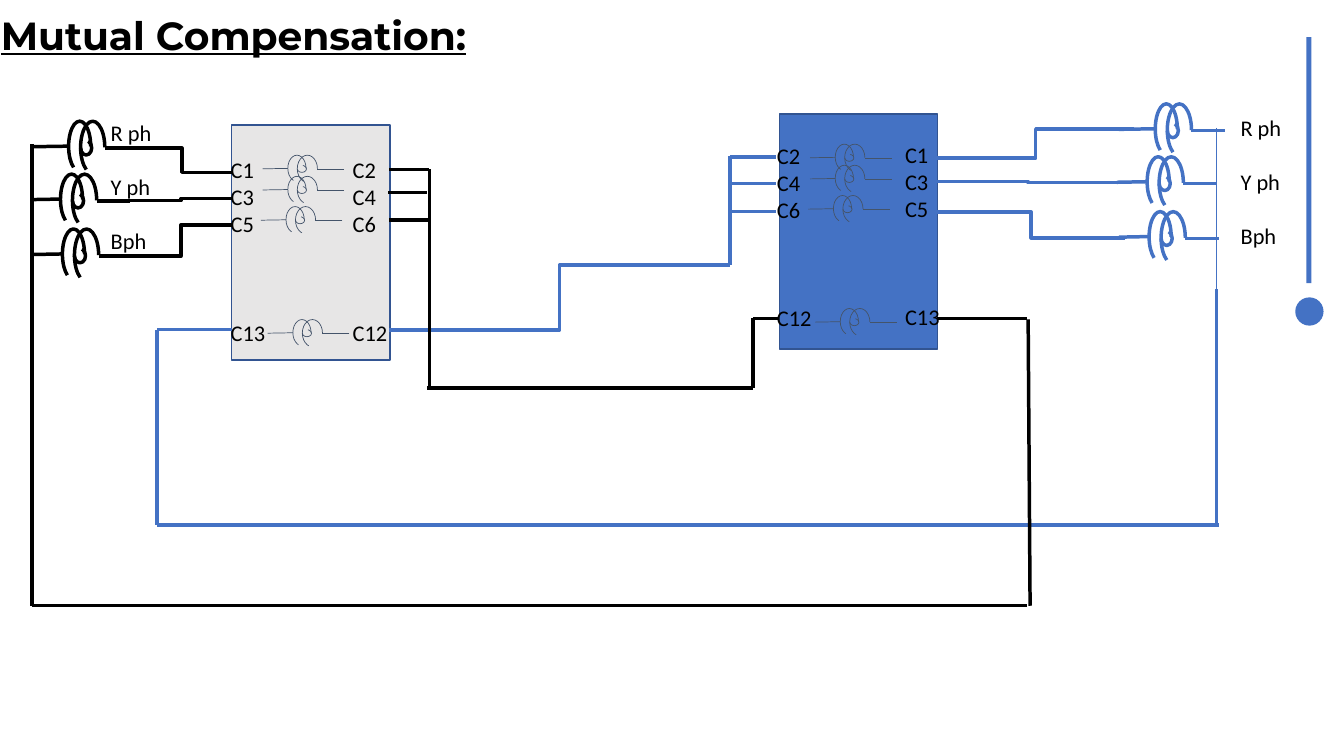
"""Builds the mutual compensation wiring slide."""
from itertools import pairwise
from pptx import Presentation
from pptx.dml.color import RGBColor
from pptx.enum.shapes import MSO_CONNECTOR as CONN, MSO_SHAPE as SHAPE
from pptx.util import Pt
from lxml.etree import SubElement
from pptx.oxml.ns import qn

BLUE, BLACK, GREY, EDGE, COIL = "4472C4", "000000", "E7E6E6", "325491", "44546A"
WIRE, THIN = 2.5, 0.5
LINE_HEIGHT = 19.5

TITLE = "Mutual Compensation:"
PHASES = ["R ph", "Y ph", "Bph"]
ODD = ["C1", "C3", "C5", "C13"]
EVEN = ["C2", "C4", "C6", "C12"]

PANEL_SIZE = (113, 167.8)
PANELS = [
    (556.6, 81.4, BLUE, [(547.9, 97.9, EVEN), (639.4, 97.2, ODD)]),
    (165.6, 89.3, GREY, [(157.7, 108, ODD), (244.8, 108, EVEN)]),
]
PANEL_COILS = [(40, 21.6), (40, 36.7), (38.7, 58.3), (43.6, 139)]

PHASE_SETS = [(819.4, 74.2, BLUE), (43.2, 86.6, BLACK)]
PHASE_COILS = [(5.8, 0, 26), (0, 37.8, 21.6), (1.4, 77, 21.6)]
PHASE_LABELS = [(879.1, 77.8), (72, 81.4)]

SMALL = {"arcs": [(0, 0, 13, 18.7, 0), (6.8, 7.2, 6.5, 5, 180), (6.8, 0, 14.4, 19.4, 0)],
         "lead_out": (21, 40.3, 10.1), "lead_in": (9.4, 9.7)}
LARGE = {"arcs": [(0, 0, 15.8, 36, 0), (8.6, 14, 7.9, 10.1, 180), (8.6, 0, 17.3, 37.4, 0)],
         "lead_out": (25.9, 49.7, 19.1), "lead_in": (17.8, 18.2)}

ELBOWS = [
    (BLUE, (810, 92.2), (669.6, 113)),
    (BLUE, (799.2, 130.3), (669.6, 129.6)),
    (BLUE, (803.5, 169.9), (669.6, 151.5)),
    (BLUE, (521.3, 189.4), (277.9, 235.8)),
    (BLACK, (94.3, 105.8), (165.6, 123.1)),
    (BLACK, (92.9, 143.3), (165.6, 141.8)),
    (BLACK, (92.9, 182.9), (165.6, 160.6)),
]
RUNS = [
    (BLUE, THIN, [(869, 91.4), (869, 209.5)]),
    (BLUE, WIRE, [(521.3, 112.3), (554.4, 112.3)]),
    (BLUE, WIRE, [(521.3, 131), (554.4, 131)]),
    (BLUE, WIRE, [(521.3, 151.2), (554.4, 151.2)]),
    (BLUE, WIRE, [(521.3, 111.6), (521.3, 189.4)]),
    (BLUE, WIRE, [(165.6, 235.4), (112.3, 235.4), (112.3, 375.1), (870.5, 375.1)]),
    (BLUE, WIRE, [(869, 375.1), (869, 206.6)]),
    (BLACK, WIRE, [(277.9, 121), (306.7, 121)]),
    (BLACK, WIRE, [(277.2, 137.5), (305.3, 137.5)]),
    (BLACK, WIRE, [(277.9, 157), (306.7, 157)]),
    (BLACK, WIRE, [(306.7, 121), (306.7, 173.5), (306.7, 277.2)]),
    (BLACK, WIRE, [(305.3, 277.2), (537.8, 277.2), (537.8, 227.5), (556.6, 227.5)]),
    (BLACK, WIRE, [(23, 103), (23, 432.7), (733.7, 432.7)]),
    (BLACK, WIRE, [(669.6, 227.5), (733.7, 227.5)]),
    (BLACK, WIRE, [(734.4, 228.2), (735.8, 432.7)]),
]

prs = Presentation()
prs.slide_width, prs.slide_height = Pt(960), Pt(540)
shapes = prs.slides.add_slide(prs.slide_layouts[6]).shapes


def rgb(value):
    return RGBColor.from_string(value)


def add_shape(kind, x, y, w, h, fill=None, line=None, width=1):
    sp = shapes.add_shape(kind, Pt(x), Pt(y), Pt(w), Pt(h))
    sp.shadow.inherit = False
    if fill:
        sp.fill.solid()
        sp.fill.fore_color.rgb = rgb(fill)
    else:
        sp.fill.background()
    if line:
        sp.line.color.rgb = rgb(line)
        sp.line.width = Pt(width)
    else:
        sp.line.fill.background()
    return sp


def add_wire(start, end, color, width=WIRE, kind=CONN.STRAIGHT):
    cn = shapes.add_connector(kind, *(Pt(v) for v in (*start, *end)))
    cn.line.color.rgb = rgb(color)
    cn.line.width = Pt(width)
    SubElement(cn._element.spPr, qn("a:effectLst"))


def add_text(x, y, w, h, lines, gaps, size=16, font="Calibri", strong=False):
    tf = shapes.add_textbox(Pt(x), Pt(y), Pt(w), Pt(h)).text_frame
    tf.word_wrap = True
    for i, (line, gap) in enumerate(zip(lines, gaps)):
        p = tf.add_paragraph() if i else tf.paragraphs[0]
        p.space_before = Pt(gap * LINE_HEIGHT)
        r = p.add_run()
        r.text = line
        r.font.size, r.font.name = Pt(size), font
        r.font.color.rgb = rgb(BLACK)
        if strong:
            r.font.bold = r.font.underline = True


def add_coil(x, y, form, lead, color, width):
    for dx, dy, w, h, turn in form["arcs"]:
        arc = add_shape(SHAPE.ARC, x + dx, y + dy, w, h, line=color, width=width)
        arc.adjustments[0] = 63.69
        arc.adjustments[1] = 0
        arc.rotation = turn
    near, far, level = form["lead_out"]
    add_wire((x + far, y + level), (x + near, y + level), color, width)
    top, bottom = form["lead_in"]
    add_wire((x, y + top), (x - lead, y + bottom), color, width)


add_shape(SHAPE.RECTANGLE, 933.1, 26.6, 3.6, 175.7, BLUE)
add_shape(SHAPE.OVAL, 925.2, 212.4, 20.2, 20.2, BLUE)
add_text(-6.5, 4.3, 912.2, 41, [TITLE], [0], 28, "Montserrat", True)

for left, top, fill, labels in PANELS:
    add_shape(SHAPE.RECTANGLE, left, top, *PANEL_SIZE, fill, EDGE)
    for dx, dy in PANEL_COILS:
        add_coil(left + dx, top + dy, SMALL, 18, COIL, THIN)
    for x, y, names in labels:
        add_text(x, y, 41.8, 143.3, names, [0, 0, 0, 3])

for left, top, color in PHASE_SETS:
    for dx, dy, lead in PHASE_COILS:
        add_coil(left + dx, top + dy, LARGE, lead, color, WIRE)

for color, start, end in ELBOWS:
    add_wire(start, end, color, kind=CONN.ELBOW)
for color, width, points in RUNS:
    for start, end in pairwise(points):
        add_wire(start, end, color, width)

for x, y in PHASE_LABELS:
    add_text(x, y, 57.6, 104.4, PHASES, [0, 1, 1])

prs.save("out.pptx")
